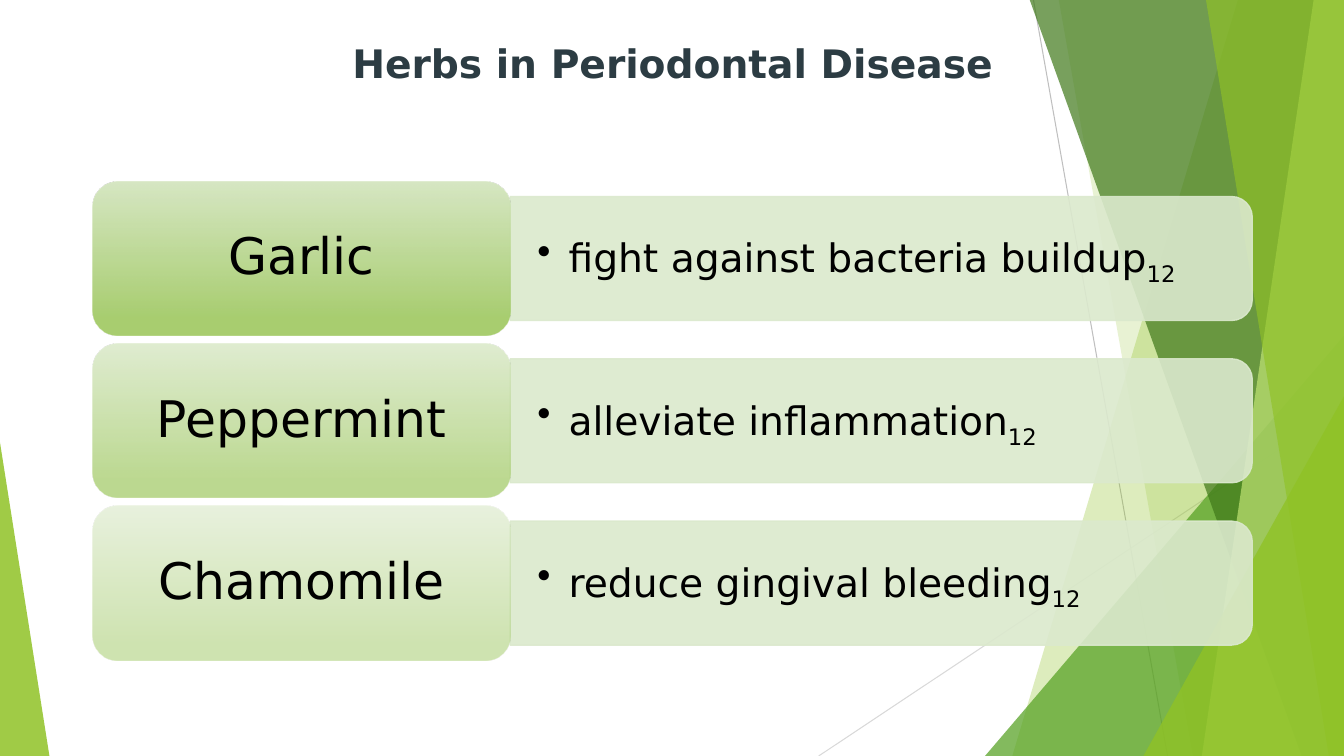
"""Build the herbs in periodontal disease slide."""
from dataclasses import dataclass

from lxml.etree import SubElement
from pptx import Presentation
from pptx.dml.color import RGBColor
from pptx.enum.shapes import MSO_CONNECTOR, MSO_SHAPE
from pptx.enum.text import MSO_ANCHOR, PP_ALIGN
from pptx.oxml.ns import qn
from pptx.util import Inches, Pt

WIDTH, HEIGHT = 13.33, 7.5
FACET_TOP = -0.01
FONT = "DejaVu Sans"
LIME = RGBColor(0x90, 0xC2, 0x26)
GREEN = RGBColor(0x54, 0xA0, 0x21)
FOREST = RGBColor(0x3F, 0x78, 0x19)
PALE_LIME = RGBColor(0xC0, 0xE4, 0x74)
MID_GREY = RGBColor(0xBF, 0xBF, 0xBF)
LIGHT_GREY = RGBColor(0xD9, 0xD9, 0xD9)
SLATE = RGBColor(0x2C, 0x3C, 0x43)
BLACK = RGBColor(0, 0, 0)
BAR = RGBColor(0xDB, 0xE9, 0xCD)
LABEL_TOP = RGBColor(0xD3, 0xE5, 0xBE)
LABEL_BOTTOM = RGBColor(0xA0, 0xC9, 0x62)

FIRST_ROW, ROW_PITCH = 1.8, 1.61
LABEL_LEFT, LABEL_WIDTH, LABEL_HEIGHT = 0.92, 4.14, 1.53
BAR_LENGTH, BAR_HEIGHT = 7.36, 1.23
DETAIL_WIDTH, DETAIL_HEIGHT = 7.3, 1.11

LABEL_FRAME = dict(word_wrap=True, vertical_anchor=MSO_ANCHOR.MIDDLE,
                   margin_left=Inches(0.15), margin_right=Inches(0.15),
                   margin_top=Inches(0.07), margin_bottom=Inches(0.07))
DETAIL_FRAME = dict(word_wrap=True, vertical_anchor=MSO_ANCHOR.MIDDLE,
                    margin_left=Inches(0.27), margin_right=Inches(0.27),
                    margin_top=Inches(0.14), margin_bottom=Inches(0.14))
TITLE_FRAME = dict(word_wrap=True, vertical_anchor=MSO_ANCHOR.TOP)
TITLE_FONT = dict(name=FONT, size=Pt(28), bold=True)
LABEL_FONT = dict(name=FONT, size=Pt(36))
DETAIL_FONT = dict(name=FONT, size=Pt(28))


@dataclass
class Ray:
    start: tuple[float, float]
    end: tuple[float, float]
    color: RGBColor


@dataclass
class Facet:
    top_left: float
    bottom_left: float
    color: RGBColor
    opacity: int


@dataclass
class Corner:
    left: float
    top: float
    width: float
    apex: float
    color: RGBColor
    opacity: int


@dataclass
class Herb:
    name: str
    benefit: str
    reference: str
    opacity: int


RAYS = [
    Ray((10.25, 0), (11.58, HEIGHT), MID_GREY),
    Ray((WIDTH, 4.03), (8.12, HEIGHT), LIGHT_GREY),
]
BACKDROP = [
    Facet(12.28, 10.04, LIME, 30),
    Facet(10.5, 11.83, LIME, 20),
    Corner(9.77, 3.33, 3.56, 1, GREEN, 72),
    Facet(10.21, 12.91, FOREST, 70),
    Facet(13.03, 11.92, PALE_LIME, 70),
    Facet(11.96, 13.18, LIME, 65),
    Corner(11.34, 3.93, 1.99, 1, LIME, 80),
    Corner(0, 4.39, 0.49, 0, LIME, 85),
]
HERBS = [
    Herb("Garlic", "fight against bacteria buildup", "12", 90),
    Herb("Peppermint", "alleviate inflammation", "12", 70),
    Herb("Chamomile", "reduce gingival bleeding", "12", 50),
]


def apply(target, values: dict) -> None:
    """Set each named value on the target."""
    for name, value in values.items():
        setattr(target, name, value)


def box(left: float, top: float, width: float, height: float) -> list:
    """Return a position and size as lengths."""
    return [Inches(value) for value in (left, top, width, height)]


def set_opacity(shape, percent: int) -> None:
    """Give every colour of the shape's fill and line this opacity."""
    for color in list(shape._element.spPr.iter(qn("a:srgbClr"))):
        SubElement(color, qn("a:alpha"), val=str(percent * 1000))


def paint(shape, color: RGBColor, opacity: int) -> None:
    """Give the shape a flat translucent fill without line or shadow."""
    shape.shadow.inherit = False
    shape.fill.solid()
    shape.fill.fore_color.rgb = color
    shape.line.fill.background()
    set_opacity(shape, opacity)


def add_run(paragraph, text: str, font: dict, color: RGBColor):
    """Add formatted text to the paragraph."""
    run = paragraph.add_run()
    run.text = text
    apply(run.font, font)
    run.font.color.rgb = color
    return run


def draw_ray(shapes, ray: Ray) -> None:
    """Draw a thin background line."""
    points = [Inches(value) for value in (*ray.start, *ray.end)]
    line = shapes.add_connector(MSO_CONNECTOR.STRAIGHT, *points)
    line.line.color.rgb = ray.color
    line.line.width = Pt(0.75)
    SubElement(line._element.spPr, qn("a:effectLst"))


def draw_facet(shapes, facet: Facet) -> None:
    """Draw a panel that reaches the right edge of the slide."""
    outline = [(facet.top_left, FACET_TOP), (WIDTH, FACET_TOP),
               (WIDTH, HEIGHT), (facet.bottom_left, HEIGHT)]
    start, *others = [(Inches(x), Inches(y)) for x, y in outline]
    builder = shapes.build_freeform(*start)
    builder.add_line_segments(others, close=True)
    paint(builder.convert_to_shape(), facet.color, facet.opacity)


def draw_corner(shapes, corner: Corner) -> None:
    """Draw a right triangle that stands on the bottom edge."""
    place = box(corner.left, corner.top, corner.width, HEIGHT - corner.top)
    triangle = shapes.add_shape(MSO_SHAPE.ISOSCELES_TRIANGLE, *place)
    triangle.adjustments[0] = corner.apex
    paint(triangle, corner.color, corner.opacity)


def draw_title(shapes, text: str) -> None:
    """Draw the centred slide title."""
    title = shapes.add_textbox(*box(0.92, 0.34, 11.5, 1.45))
    apply(title.text_frame, TITLE_FRAME)
    paragraph = title.text_frame.paragraphs[0]
    paragraph.alignment = PP_ALIGN.CENTER
    add_run(paragraph, text, TITLE_FONT, SLATE)


def draw_bar(shapes, left: float, middle: float) -> None:
    """Draw the bar behind a benefit, rounded at its right end."""
    place = box(left + (BAR_LENGTH - BAR_HEIGHT) / 2, middle - BAR_LENGTH / 2,
                BAR_HEIGHT, BAR_LENGTH)
    bar = shapes.add_shape(MSO_SHAPE.ROUND_2_SAME_RECTANGLE, *place)
    bar.rotation = 90
    bar.shadow.inherit = False
    bar.fill.solid()
    bar.fill.fore_color.rgb = BAR
    bar.line.color.rgb = BAR
    bar.line.width = Pt(1)
    set_opacity(bar, 90)


def draw_benefit(shapes, herb: Herb, left: float, middle: float) -> None:
    """Draw the bulleted benefit with its reference number."""
    place = box(left, middle - DETAIL_HEIGHT / 2, DETAIL_WIDTH, DETAIL_HEIGHT)
    detail = shapes.add_textbox(*place)
    apply(detail.text_frame, DETAIL_FRAME)
    paragraph = detail.text_frame.paragraphs[0]
    apply(paragraph, dict(level=1, line_spacing=0.9))
    properties = paragraph._p.get_or_add_pPr()
    properties.set("marL", str(Inches(0.31)))
    properties.set("indent", str(-Inches(0.31)))
    SubElement(properties, qn("a:buChar"), char="•")
    add_run(paragraph, herb.benefit, DETAIL_FONT, BLACK)
    reference = add_run(paragraph, herb.reference, DETAIL_FONT, BLACK)
    reference._r.get_or_add_rPr().set("baseline", "-25000")


def draw_label(shapes, herb: Herb, top: float) -> None:
    """Draw the herb's name on a gradient panel."""
    place = box(LABEL_LEFT, top, LABEL_WIDTH, LABEL_HEIGHT)
    label = shapes.add_shape(MSO_SHAPE.ROUNDED_RECTANGLE, *place)
    label.shadow.inherit = False
    label.line.fill.background()
    label.fill.gradient()
    label.fill.gradient_angle = 270
    colors = [(0, LABEL_TOP), (0.88, LABEL_BOTTOM)]
    for stop, (position, color) in zip(label.fill.gradient_stops, colors):
        stop.position = position
        stop.color.rgb = color
    set_opacity(label, herb.opacity)
    apply(label.text_frame, LABEL_FRAME)
    paragraph = label.text_frame.paragraphs[0]
    apply(paragraph, dict(alignment=PP_ALIGN.CENTER, line_spacing=0.9))
    add_run(paragraph, herb.name, LABEL_FONT, BLACK)


def main() -> None:
    """Draw the slide and save it."""
    deck = Presentation()
    apply(deck, dict(slide_width=Inches(WIDTH), slide_height=Inches(HEIGHT)))
    shapes = deck.slides.add_slide(deck.slide_layouts[6]).shapes
    for ray in RAYS:
        draw_ray(shapes, ray)
    for part in BACKDROP:
        draw = draw_facet if isinstance(part, Facet) else draw_corner
        draw(shapes, part)
    draw_title(shapes, "Herbs in Periodontal Disease")
    for row, herb in enumerate(HERBS):
        top = FIRST_ROW + row * ROW_PITCH
        middle = top + LABEL_HEIGHT / 2
        draw_bar(shapes, LABEL_LEFT + LABEL_WIDTH, middle)
        draw_benefit(shapes, herb, LABEL_LEFT + LABEL_WIDTH, middle)
        draw_label(shapes, herb, top)
    deck.save("out.pptx")


if __name__ == "__main__":
    main()
